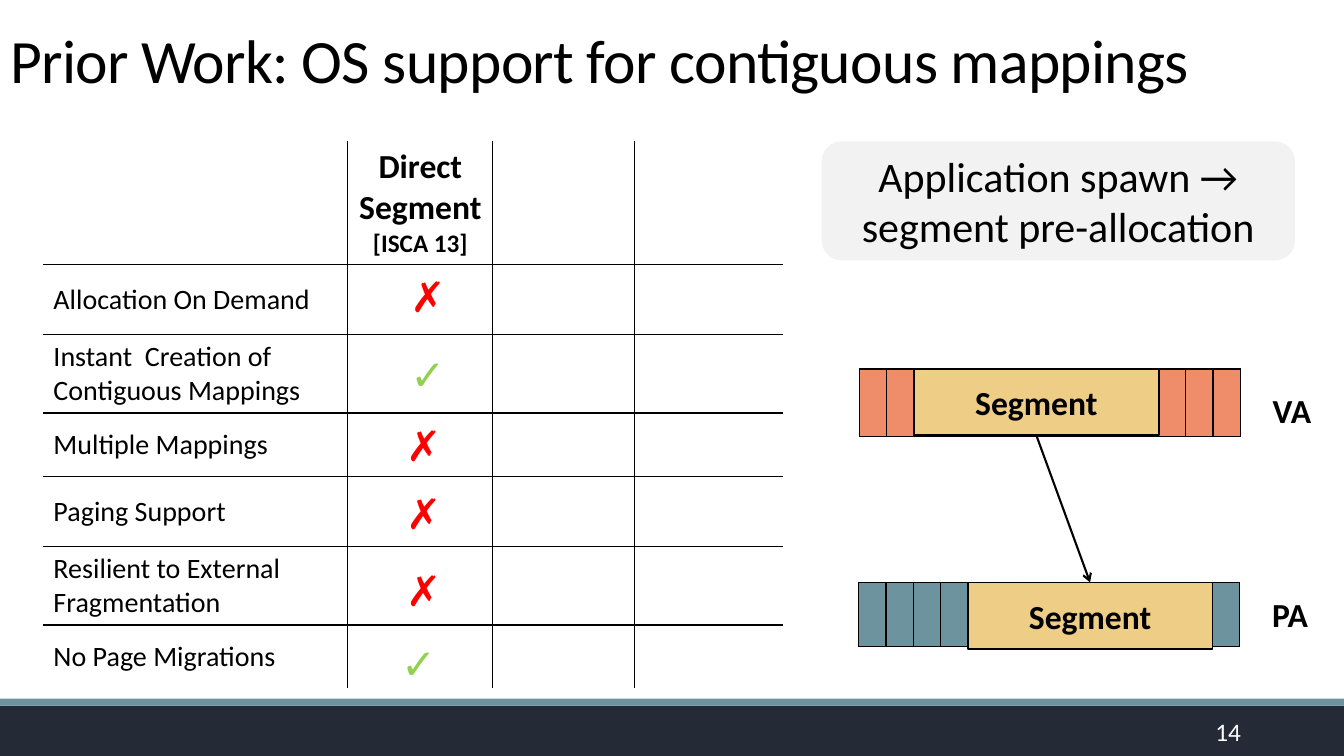
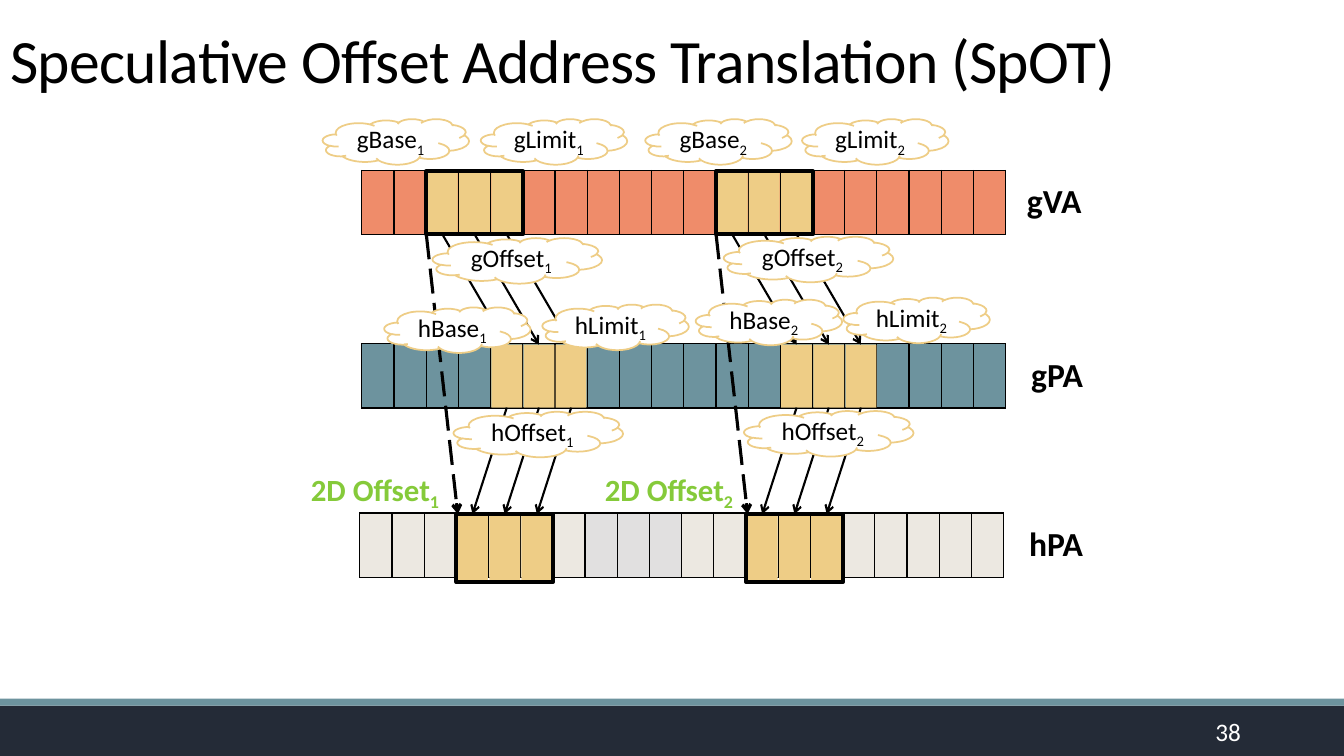
from dataclasses import dataclass

from lxml.etree import SubElement
from pptx import Presentation
from pptx.dml.color import RGBColor
from pptx.enum.dml import MSO_LINE
from pptx.enum.shapes import MSO_CONNECTOR, MSO_SHAPE
from pptx.enum.text import MSO_ANCHOR, MSO_AUTO_SIZE, PP_ALIGN
from pptx.oxml.ns import qn
from pptx.util import Pt


@dataclass(frozen=True)
class Theme:
    font: str = "Calibri"
    ink: str = "000000"
    paper: str = "FFFFFF"
    navy: str = "242B37"
    teal: str = "6D939E"
    coral: str = "EF8C6A"
    sand: str = "EECD86"
    stone: str = "ECE8E1"
    silver: str = "E1E0E0"
    mist: str = "F2F2F2"
    red: str = "FF0000"
    green: str = "92D050"
    leaf: str = "85CA3A"
    title: float = 44
    large: float = 30
    heading: float = 24
    offset: float = 22
    body: float = 20
    small: float = 18


@dataclass(frozen=True)
class Box:
    left: float
    top: float
    width: float
    height: float

    @property
    def right(self):
        return self.left + self.width

    @property
    def bottom(self):
        return self.top + self.height

    def inner(self, x, y, width, height):
        return Box(self.left + x, self.top + y, width, height)

    def columns(self, first, count, total):
        pitch = self.width / total
        return self.inner(first * pitch, 0, count * pitch, self.height)

    def points(self):
        return [Pt(round(n, 2)) for n in (self.left, self.top, self.width, self.height)]


THEME = Theme()
PAGE = Box(0, 0, 960, 540)
TITLE = Box(0, 0.5, 960, 71.5)
NUMBER = Box(790.5, 508.5, 103, 28.5)
BANDS = [(Box(0, 504, 960, 36), THEME.navy), (Box(0, 499, 960, 5), THEME.teal)]


def color(value):
    return RGBColor.from_string(value)


def style_para(para, size, ink=THEME.ink, bold=False, align=PP_ALIGN.LEFT):
    para.alignment = align
    for span in para.runs:
        span.font.name = THEME.font
        span.font.size = Pt(size)
        span.font.bold = bold
        span.font.color.rgb = color(ink)


def write(frame, text, size, subscript="", **style):
    frame.text = text
    if subscript:
        frame.paragraphs[0].add_run().text = subscript
    for para in frame.paragraphs:
        style_para(para, size, **style)


def lower_last_run(shape):
    shape.element.xpath(".//a:rPr")[-1].set("baseline", "-25000")


def add_label(page, box, text, size, **style):
    label = page.shapes.add_textbox(*box.points())
    frame = label.text_frame
    frame.word_wrap = False
    frame.auto_size = MSO_AUTO_SIZE.SHAPE_TO_FIT_TEXT
    write(frame, text, size, **style)
    return label


def add_block(page, box, fill=None, line=None, weight=1.25, kind=MSO_SHAPE.RECTANGLE):
    block = page.shapes.add_shape(kind, *box.points())
    block.shadow.inherit = False
    if fill:
        block.fill.solid()
        block.fill.fore_color.rgb = color(fill)
    else:
        block.fill.background()
    if line:
        block.line.color.rgb = color(line)
        block.line.width = Pt(weight)
    else:
        block.line.fill.background()
    return block


def add_arrow(page, start=(0, 0), end=(0, 0), weight=1.5, dash=None):
    ends = [Pt(round(n, 2)) for n in (*start, *end)]
    arrow = page.shapes.add_connector(MSO_CONNECTOR.STRAIGHT, *ends)
    arrow.line.color.rgb = color(THEME.ink)
    arrow.line.width = Pt(weight)
    if dash:
        arrow.line.dash_style = dash
    properties = arrow.element.xpath("./p:spPr")[0]
    SubElement(properties.find(qn("a:ln")), qn("a:tailEnd"), type="arrow")
    SubElement(properties, qn("a:effectLst"))
    return arrow


def join_down(page, upper, lower):
    arrow = add_arrow(page)
    arrow.begin_connect(upper, 2)
    arrow.end_connect(lower, 0)


def add_borders(cell_element, sides):
    properties = cell_element.get_or_add_tcPr()
    for side in "LRTB":
        line = SubElement(properties, qn(f"a:ln{side}"), w=str(Pt(1)))
        if side in sides:
            fill = SubElement(line, qn("a:solidFill"))
            SubElement(fill, qn("a:srgbClr"), val=THEME.ink)
        else:
            SubElement(line, qn("a:noFill"))


def add_grid(page, box, widths, heights, outlined):
    graphic = page.shapes.add_table(len(heights), len(widths), *box.points())
    table = graphic.table
    table.first_row = table.horz_banding = False
    for column, width in zip(table.columns, widths):
        column.width = Pt(round(width, 2))
    for row, height in zip(table.rows, heights):
        row.height = Pt(height)
    for index, element in enumerate(graphic.element.xpath(".//a:tc")):
        row, column = divmod(index, len(widths))
        inside = {"L": column > 0, "R": column < len(widths) - 1,
                  "T": row > 0, "B": row < len(heights) - 1}
        add_borders(element, [side for side in inside if outlined or inside[side]])
    for cell in table.iter_cells():
        cell.fill.background()
        cell.vertical_anchor = MSO_ANCHOR.MIDDLE
    return table


def add_strip(page, box, fills, name, gap, drop):
    count = len(fills)
    table = add_grid(page, box, [box.width / count] * count, [box.height], True)
    for cell, fill in zip(table.iter_cells(), fills):
        cell.fill.solid()
        cell.fill.fore_color.rgb = color(fill)
    add_label(page, box.inner(box.width + gap, drop, 54, 36), name, THEME.heading, bold=True)


def add_bands(page, layout):
    for index, (box, fill) in enumerate(BANDS):
        band = add_block(page, box, fill)
        band.element.xpath("./p:nvSpPr/p:cNvPr")[0].set("id", str(100 + index))
        layout.shapes.element.append(band.element)


def start_page(deck, layout, title, number):
    page = deck.slides.add_slide(layout)
    heading = page.shapes.title
    heading.left, heading.top, heading.width, heading.height = TITLE.points()
    frame = heading.text_frame
    frame.word_wrap = True
    frame.auto_size = MSO_AUTO_SIZE.NONE
    frame.vertical_anchor = MSO_ANCHOR.BOTTOM
    write(frame, title, THEME.title)
    frame.paragraphs[0].line_spacing = 0.85
    for properties in heading.element.xpath(".//a:rPr"):
        properties.set("spc", "-50")
    footer = page.shapes.add_textbox(*NUMBER.points()).text_frame
    footer.word_wrap = True
    footer.vertical_anchor = MSO_ANCHOR.MIDDLE
    write(footer, number, THEME.small, ink=THEME.paper, align=PP_ALIGN.RIGHT)
    return page


def add_comparison(page, box):
    features = ["Allocation On Demand", "Instant  Creation of Contiguous Mappings",
                "Multiple Mappings", "Paging Support",
                "Resilient to External Fragmentation", "No Page Migrations"]
    marks = [("✗", 255, 89), ("✓", 255, 144.5), ("✗", 252, 195),
             ("✗", 252, 244), ("✗", 252, 298.5), ("✓", 248.5, 351)]
    table = add_grid(page, box, [217.5, 103.5, 101, 106.5],
                     [88, 50, 56, 45.5, 50, 56, 45], False)
    header = table.cell(0, 1).text_frame
    write(header, "Direct\nSegment\n[ISCA 13]", THEME.heading, bold=True, align=PP_ALIGN.CENTER)
    style_para(header.paragraphs[2], THEME.small, bold=True, align=PP_ALIGN.CENTER)
    for row, feature in enumerate(features, 1):
        write(table.cell(row, 0).text_frame, feature, THEME.body)
    for mark, x, y in marks:
        passed = mark == "✓"
        add_label(page, box.inner(x, y, 38 if passed else 34, 44), mark, THEME.large,
                  ink=THEME.green if passed else THEME.red)


def add_segment_mapping(page, box):
    callout = add_block(page, box.inner(0, 0, 338, 85), THEME.mist,
                        kind=MSO_SHAPE.ROUNDED_RECTANGLE)
    write(callout.text_frame, "Application spawn →\vsegment pre-allocation", THEME.large,
          align=PP_ALIGN.CENTER)
    segments = []
    for name, fill, first, strip, drop in [
        ("VA", THEME.coral, 2, box.inner(27, 162.5, 272, 48), 11.5),
        ("PA", THEME.teal, 4, box.inner(26.5, 315, 272, 46), 5),
    ]:
        add_strip(page, strip, [fill] * 14, name, 16, drop)
        span = strip.columns(first, 9, 14)
        segment = add_block(page, span.inner(0, 0, span.width, 47.5), THEME.sand, THEME.ink)
        write(segment.text_frame, "Segment", THEME.heading, bold=True, align=PP_ALIGN.CENTER)
        segments.append(segment)
    join_down(page, *segments)


def add_cloud(page, box, name, subscript):
    cloud = add_block(page, box, THEME.paper, THEME.sand, kind=MSO_SHAPE.CLOUD)
    write(cloud.text_frame, name, THEME.small, subscript, align=PP_ALIGN.CENTER)
    lower_last_run(cloud)


def add_translation(page, box):
    total, run = 20, 3
    host_fills = [THEME.silver if 7 <= n <= 9 else THEME.stone for n in range(total)]
    levels = [
        ("gVA", box.inner(43.5, 36.7, 460, 46), [THEME.coral] * total, (2, 11), 45),
        ("gPA", box.inner(43.5, 160.5, 460, 46), [THEME.teal] * total, (4, 13), 45),
        ("hPA", box.inner(42, 281.5, 460, 46), host_fills, (3, 12), 48.5),
    ]
    for name, strip, fills, firsts, height in levels:
        add_strip(page, strip, fills, name, 8 if name == "gVA" else 11, 3.5)
    frames = []
    for group in range(2):
        rows, spans = [], []
        for name, strip, fills, firsts, height in levels:
            first = firsts[group]
            cells = [strip.columns(first + n, 1, total) for n in range(run)]
            rows.append([add_block(page, cell.inner(0.5, 0.7, 22, height), THEME.sand)
                         for cell in cells])
            span = strip.columns(first, run, total)
            spans.append(span.inner(0, 0.7, span.width, height))
        for upper, lower in zip(rows, rows[1:]):
            for pair in zip(upper, lower):
                join_down(page, *pair)
        guest, host = spans[0], spans[-1]
        add_arrow(page, (guest.left, guest.bottom), (host.left + 1, host.top),
                  2.25, MSO_LINE.LONG_DASH)
        label = add_label(page, box.inner(group * 210, 247.5, 109, 34), "2D Offset",
                          THEME.offset, subscript=str(group + 1), ink=THEME.leaf, bold=True)
        lower_last_run(label)
        frames += [guest, host]
    clouds = [
        ("gBase", 104.5, [(15.5, 0), (246, 0)]),
        ("gLimit", 104.5, [(128.5, 0), (358, 0)]),
        ("gOffset", 121, [(94, 85), (302, 84)]),
        ("hBase", 104.5, [(59.5, 134.5), (282, 129)]),
        ("hLimit", 104.5, [(172.5, 132.5), (387.5, 127.5)]),
        ("hOffset", 121, [(109, 209), (316.5, 208.5)]),
    ]
    for name, width, places in clouds:
        for number, (x, y) in enumerate(places, 1):
            add_cloud(page, box.inner(x, y, width, 32.5), name, str(number))
    for frame in frames:
        add_block(page, frame, line=THEME.ink, weight=3)


def main():
    deck = Presentation()
    deck.slide_width, deck.slide_height = Pt(PAGE.width), Pt(PAGE.height)
    layout = deck.slide_layouts[5]

    page = start_page(deck, layout, "Prior Work: OS support for contiguous mappings", "14")
    add_bands(page, layout)
    add_comparison(page, Box(31, 101, 528.5, 390.5))
    add_segment_mapping(page, Box(587, 101, 358, 362))

    page = start_page(deck, layout, "Speculative Offset Address Translation (SpOT)", "38")
    add_translation(page, Box(215, 85, 570, 335))
    deck.save("out.pptx")


if __name__ == "__main__":
    main()
